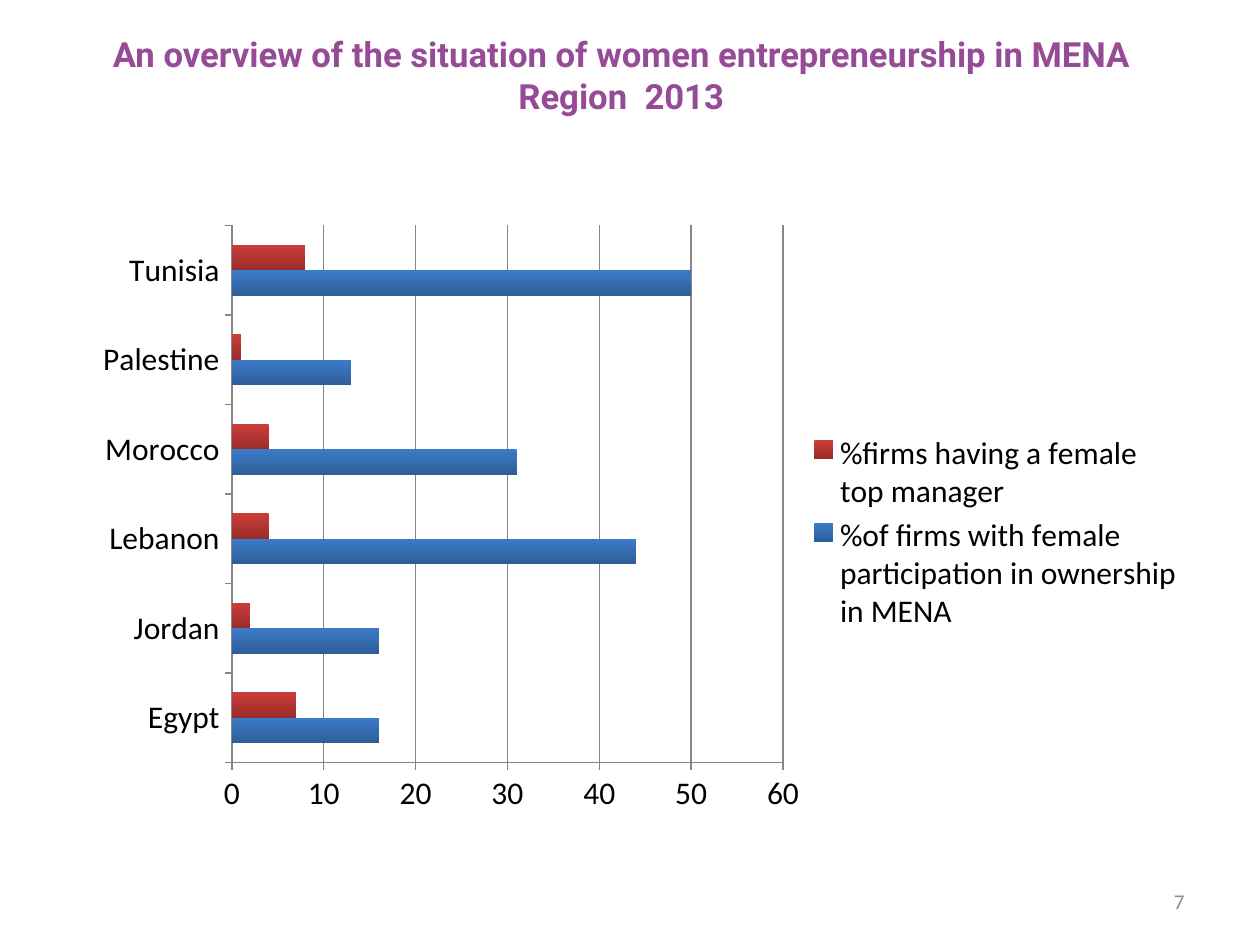
import pptx
import pptx.chart.data
import pptx.dml.color
import pptx.enum.chart
import pptx.enum.text
import pptx.oxml
import pptx.oxml.ns
import pptx.util

Pt = pptx.util.Pt
RGBColor = pptx.dml.color.RGBColor
ANCHOR = pptx.enum.text.MSO_ANCHOR
ALIGN = pptx.enum.text.PP_ALIGN

PURPLE = RGBColor(0x95, 0x4B, 0x96)
BLACK = RGBColor(0, 0, 0)
PAGE_GREY = RGBColor(0x8C, 0x8C, 0x8C)
AXIS_GREY = RGBColor(0x86, 0x86, 0x86)
BLUE_SHADES = (RGBColor(0x3C, 0x7B, 0xC9), RGBColor(0x2E, 0x5E, 0x98))
RED_SHADES = (RGBColor(0xCC, 0x3D, 0x3A), RGBColor(0x9A, 0x2D, 0x2A))

COUNTRIES = ("Egypt", "Jordan", "Lebanon", "Morocco", "Palestine", "Tunisia")
INDICATORS = (
    ("%of firms with female participation in ownership in MENA",
     (16, 16, 44, 31, 13, 50), BLUE_SHADES),
    ("%firms having a female top manager",
     (7, 2, 4, 4, 1, 8), RED_SHADES),
)
PLOT_BOX = {"x": 0.149, "y": 0.008, "w": 0.486, "h": 0.861}


def write(frame, text, font_name, size, color, align, bold=False):
    frame.word_wrap = True
    frame.vertical_anchor = ANCHOR.MIDDLE
    paragraph = frame.paragraphs[0]
    paragraph.alignment = align
    run = paragraph.add_run()
    run.text = text
    run.font.name = font_name
    run.font.size = Pt(size)
    run.font.bold = bold
    run.font.color.rgb = color


def place_heading(slide, left, top, width, height):
    heading = slide.shapes.title
    heading.left, heading.top = Pt(left), Pt(top)
    heading.width, heading.height = Pt(width), Pt(height)
    frame = heading.text_frame
    frame.auto_size = pptx.enum.text.MSO_AUTO_SIZE.NONE
    # The deep bottom inset lifts the two lines above the middle
    frame.margin_bottom = Pt(27)
    write(frame,
          "An overview of the situation of women entrepreneurship in MENA Region  2013",
          "Roboto", 19.8, PURPLE, ALIGN.CENTER, bold=True)


def set_plot_layout(chart, box):
    """Fix the inner plot area, in fractions of the chart."""
    places = "".join(f'<c:{key} val="{value}"/>' for key, value in box.items())
    layout = pptx.oxml.parse_xml(
        f'<c:layout {pptx.oxml.ns.nsdecls("c")}><c:manualLayout>'
        '<c:layoutTarget val="inner"/><c:xMode val="edge"/><c:yMode val="edge"/>'
        f'{places}</c:manualLayout></c:layout>')
    plot_area = chart.plots[0]._element.getparent()
    for old_layout in plot_area.findall(pptx.oxml.ns.qn("c:layout")):
        plot_area.remove(old_layout)
    plot_area.insert(0, layout)


def place_country_chart(slide, left, top, width, height):
    data = pptx.chart.data.CategoryChartData()
    data.categories = COUNTRIES
    for name, values, _ in INDICATORS:
        data.add_series(name, values)
    chart = slide.shapes.add_chart(
        pptx.enum.chart.XL_CHART_TYPE.BAR_CLUSTERED,
        Pt(left), Pt(top), Pt(width), Pt(height), data).chart
    chart.has_title = False
    chart.font.name = "Calibri"
    chart.font.size = Pt(18)
    chart.font.color.rgb = BLACK

    # Bars, shaded from top to bottom
    bars = chart.plots[0]
    bars.vary_by_categories = False
    bars.gap_width = 150
    bars.overlap = 0
    for series, (_, _, shades) in zip(bars.series, INDICATORS):
        fill = series.format.fill
        fill.gradient()
        fill.gradient_angle = 270
        for stop, shade in zip(fill.gradient_stops, shades):
            stop.color.rgb = shade

    # Axes and gridlines
    countries, percent = chart.category_axis, chart.value_axis
    countries.has_major_gridlines = False
    percent.has_major_gridlines = True
    percent.minimum_scale, percent.maximum_scale = 0, 60
    percent.major_unit = 10
    for axis in (countries, percent):
        axis.major_tick_mark = pptx.enum.chart.XL_TICK_MARK.OUTSIDE
        axis.minor_tick_mark = pptx.enum.chart.XL_TICK_MARK.NONE
    for ruled in (countries, percent, percent.major_gridlines):
        ruled.format.line.color.rgb = AXIS_GREY
        ruled.format.line.width = Pt(0.75)

    # Legend
    chart.has_legend = True
    chart.legend.position = pptx.enum.chart.XL_LEGEND_POSITION.RIGHT
    chart.legend.include_in_layout = False
    set_plot_layout(chart, PLOT_BOX)


def place_page_number(slide, left, top, width, height):
    page_number = slide.shapes.add_textbox(Pt(left), Pt(top), Pt(width), Pt(height))
    write(page_number.text_frame, "7", "Calibri", 12, PAGE_GREY, ALIGN.RIGHT)


def main():
    deck = pptx.Presentation()
    deck.slide_width, deck.slide_height = Pt(720), Pt(540)
    slide = deck.slides.add_slide(deck.slide_layouts.get_by_name("Title Only"))
    place_heading(slide, 31, 15, 648, 78.5)
    place_country_chart(slide, 36, 126, 648, 356.4)
    place_page_number(slide, 516, 500.5, 168, 28.75)
    deck.save("out.pptx")


if __name__ == "__main__":
    main()
